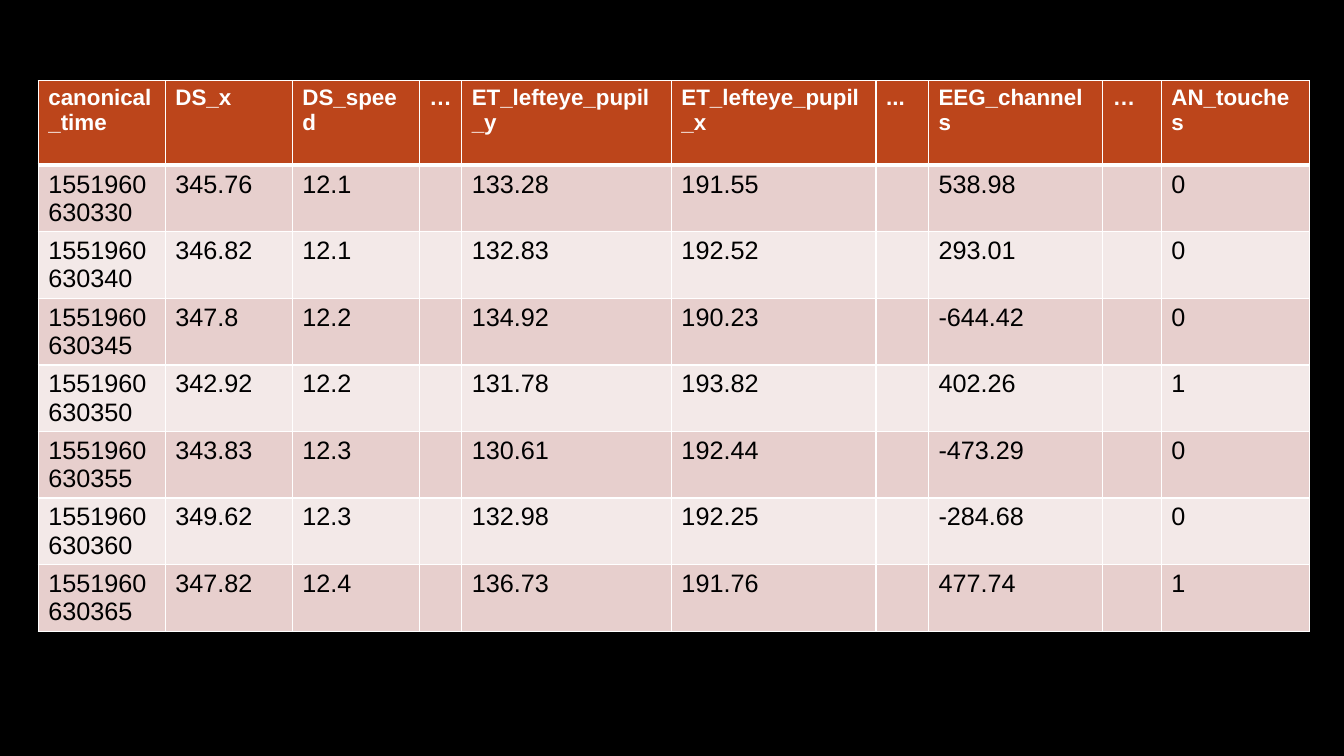
import pptx
import pptx.util
import pptx.dml.color
import pptx.oxml
import pptx.oxml.ns
from pptx.util import Inches

# Content
HEADS = ["canonical_time", "DS_x", "DS_speed", "…", "ET_lefteye_pupil_y",
         "ET_lefteye_pupil_x", "...", "EEG_channels", "…", "AN_touches"]
ROWS = [
    ["1551960630330", "345.76", "12.1", "", "133.28", "191.55", "", "538.98", "", "0"],
    ["1551960630340", "346.82", "12.1", "", "132.83", "192.52", "", "293.01", "", "0"],
    ["1551960630345", "347.8", "12.2", "", "134.92", "190.23", "", "-644.42", "", "0"],
    ["1551960630350", "342.92", "12.2", "", "131.78", "193.82", "", "402.26", "", "1"],
    ["1551960630355", "343.83", "12.3", "", "130.61", "192.44", "", "-473.29", "", "0"],
    ["1551960630360", "349.62", "12.3", "", "132.98", "192.25", "", "-284.68", "", "0"],
    ["1551960630365", "347.82", "12.4", "", "136.73", "191.76", "", "477.74", "", "1"],
]
WIDTHS = [1.26, 1.26, 1.26, 0.42, 2.08, 2.03, 0.52, 1.73, 0.58, 1.47]
HEAD_H, ROW_H = 0.84, 0.66
HEAD_FILL, BANDS = "BC451B", ["E7CFCD", "F3E9E8"]


def color(fill, code):
    fill.solid()
    fill.fore_color.rgb = pptx.dml.color.RGBColor.from_string(code)


def border(cell, side, points):
    line = pptx.oxml.parse_xml(
        f'<a:ln{side} {pptx.oxml.ns.nsdecls("a")} w="{points * 12700}">'
        '<a:solidFill><a:srgbClr val="FFFFFF"/></a:solidFill>'
        f'</a:ln{side}>')
    cell._tc.get_or_add_tcPr().append(line)


def style(cell, text, row):
    head = row == 0
    # Borders go before the fill; the rule under the header is thicker
    for side in "LRTB":
        thick = (row, side) in [(0, "B"), (1, "T")]
        border(cell, side, 3 if thick else 1)
    color(cell.fill, HEAD_FILL if head else BANDS[(row - 1) % 2])
    cell.text = text
    font = cell.text_frame.paragraphs[0].font
    font.name = "Arial"
    font.size = pptx.util.Pt(16 if head else 18)
    font.bold = head
    color(font.fill, "FFFFFF" if head else "000000")


# Slide
deck = pptx.Presentation()
deck.slide_width, deck.slide_height = Inches(13.33), Inches(7.5)
slide = deck.slides.add_slide(deck.slide_layouts[6])
color(slide.background.fill, "000000")

# Table
data = [HEADS] + ROWS
height = HEAD_H + ROW_H * len(ROWS)
table = slide.shapes.add_table(
    len(data), len(WIDTHS), Inches(0.38), Inches(0.8),
    Inches(sum(WIDTHS)), Inches(height)).table
for col, width in zip(table.columns, WIDTHS):
    col.width = Inches(width)
for r, texts in enumerate(data):
    table.rows[r].height = Inches(ROW_H if r else HEAD_H)
    for c, text in enumerate(texts):
        style(table.cell(r, c), text, r)

deck.save("out.pptx")
